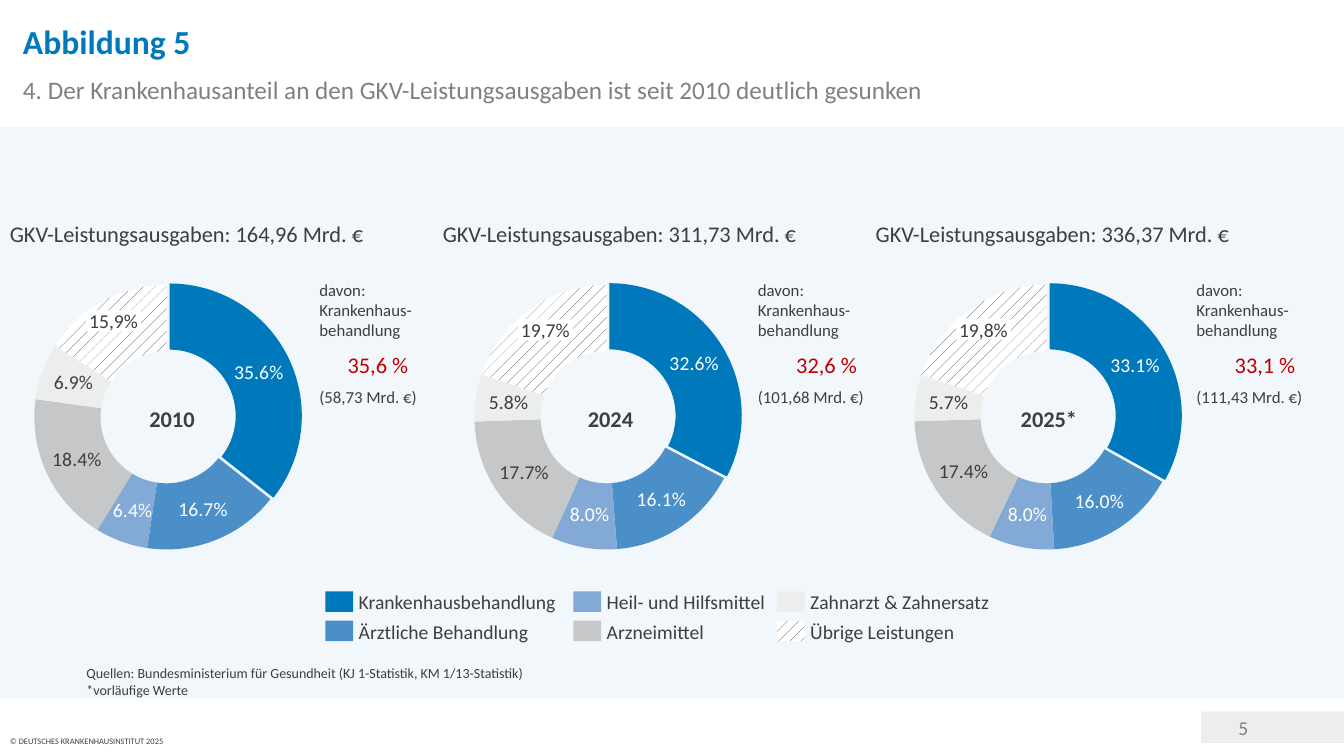
from lxml import etree
from pptx import Presentation
from pptx import util as u
from pptx.chart import data as chart_data
from pptx.dml import color
from pptx.enum import chart as chart_enum, dml, shapes, text
from pptx.oxml import ns

Cm, Pt = u.Cm, u.Pt
FONT = "Calibri"
COLORS = {
    "blue": "0079BC", "mid_blue": "4B8FC8", "light_blue": "83AAD6",
    "silver": "C6C7C8", "pale": "ECEDED", "text": "3E3D40",
    "gray": "808080", "red": "C00000", "white": "FFFFFF",
}
RGB = {name: color.RGBColor.from_string(value) for name, value in COLORS.items()}
SLICES = ["blue", "mid_blue", "light_blue", "silver", "pale", "hatch"]

presentation = Presentation()
presentation.slide_width, presentation.slide_height = Cm(33.87), Cm(19.05)
slide = presentation.slides.add_slide(presentation.slide_layouts[6])


def paint(fill, name):
    """Fill with a named colour, or with the dark-on-white pattern for "hatch"."""
    if name == "hatch":
        fill.patterned()
        fill.pattern = dml.MSO_PATTERN.PERCENT_10
        fill.fore_color.rgb, fill.back_color.rgb = RGB["text"], RGB["white"]
    else:
        fill.solid()
        fill.fore_color.rgb = RGB[name]


def add_box(box, lines=(), fill=None, inset=(0.25, 0.13), wrap=True,
            anchor=text.MSO_ANCHOR.TOP, align=text.PP_ALIGN.LEFT):
    """Box in cm; each line is (wording, size, colour, bold, space before)."""
    left, top, width, height = map(Cm, box)
    if fill:
        shape = slide.shapes.add_shape(
            shapes.MSO_SHAPE.RECTANGLE, left, top, width, height)
        shape.shadow.inherit = False
        shape.line.fill.background()
        paint(shape.fill, fill)
    else:
        shape = slide.shapes.add_textbox(left, top, width, height)
    frame = shape.text_frame
    frame.word_wrap, frame.vertical_anchor = wrap, anchor
    frame.margin_left = frame.margin_right = Cm(inset[0])
    frame.margin_top = frame.margin_bottom = Cm(inset[1])
    for index, (wording, size, tone, bold, before) in enumerate(lines):
        paragraph = frame.add_paragraph() if index else frame.paragraphs[0]
        paragraph.text = wording
        paragraph.alignment = align
        if before:
            paragraph.space_before = Pt(before)
        font = paragraph.runs[0].font
        font.name, font.size, font.bold = FONT, Pt(size), bold
        font.color.rgb = RGB[tone]
    return shape


# Frame of the slide
add_box((30.27, 17.93, 3.6, 0.79), fill="pale")
add_box((30.96, 17.91, 1.42, 0.86), [("5", 14, "gray", False, 0)], wrap=False)
add_box((0, 18.42, 8, 0.61),
        [("© DEUTSCHES KRANKENHAUSINSTITUT 2025", 6, "text", False, 0)])
panel = add_box((0, 3.2, 33.87, 14.4), fill="mid_blue")
panel_color = panel.fill._xPr.find(".//" + ns.qn("a:srgbClr"))
etree.SubElement(panel_color, ns.qn("a:alpha"), val="7000")

add_box((0.33, 0.4, 29.2, 1.3), [("Abbildung 5", 24, "blue", True, 0)])
add_box((0.33, 1.75, 32.8, 1.19),
        [("4. Der Krankenhausanteil an den GKV-Leistungsausgaben ist seit 2010 "
          "deutlich gesunken", 18, "gray", False, 0)])

# One column per year: spending, shares, hospital share, amount,
# label of the hatched slice with its place, width of the hospital text
YEARS = [
    ("2010", "164,96", [35.6, 16.7, 6.4, 18.4, 6.9, 15.9],
     "35,6 %", "58,73", "15,9%", (2.18, 7.82), 3.45),
    ("2024", "311,73", [32.6, 16.1, 8.0, 17.7, 5.8, 19.7],
     "32,6 %", "101,68", "19,7%", (13.06, 8.05), 3.96),
    ("2025*", "336,37", [33.1, 16.0, 8.0, 17.4, 5.7, 19.8],
     "33,1 %", "111,43", "19,8%", (24.1, 8.03), 3.96),
]
PLOT_AREA = {"x": 0.115, "y": 0.122, "w": 0.77, "h": 0.755}

for column, (year, spending, shares, hospital, amount,
             other, other_place, hospital_width) in enumerate(YEARS):
    add_box((10.91 * column, 5.41, 11.63, 1.19),
            [(f"GKV-Leistungsausgaben: {spending} Mrd. €", 16, "text", False, 0)])

    values = chart_data.CategoryChartData(number_format='0.0"%"')
    values.categories = ["1", "2", "3", "4", "5", "6"]
    values.add_series("Series 1", shares)
    chart = slide.shapes.add_chart(
        chart_enum.XL_CHART_TYPE.DOUGHNUT, Cm(-0.13 + 11.09 * column), Cm(6.1),
        Cm(8.66), Cm(8.84), values).chart
    chart.has_title = chart.has_legend = False
    chart.font.name, chart.font.size = FONT, Pt(14)
    chart.font.color.rgb = RGB["text"]
    plot = chart.plots[0]
    plot.vary_by_categories = True
    series = plot.series[0]
    series.data_labels.show_value = False
    for index, name in enumerate(SLICES):
        point = series.points[index]
        paint(point.format.fill, name)
        point.format.line.fill.background()
        if name != "hatch":
            font = point.data_label.font
            font.name, font.size = FONT, Pt(14)
            font.color.rgb = RGB["white" if index < 3 else "text"]

    hospital_slice = series._element.find(ns.qn("c:dPt"))
    explosion = etree.Element(ns.qn("c:explosion"), val="5")
    hospital_slice.find(ns.qn("c:spPr")).addprevious(explosion)

    plot_area = chart._chartSpace.find(".//" + ns.qn("c:plotArea"))
    for layout in plot_area.findall(ns.qn("c:layout")):
        plot_area.remove(layout)
    layout = etree.Element(ns.qn("c:layout"))
    plot_area.insert(0, layout)
    manual = etree.SubElement(layout, ns.qn("c:manualLayout"))
    settings = {"layoutTarget": "inner", "xMode": "edge", "yMode": "edge", **PLOT_AREA}
    for key, value in settings.items():
        etree.SubElement(manual, ns.qn("c:" + key), val=str(value))

    add_box((*other_place, 1.37, 0.53), [(other, 14, "text", False, 0)],
            fill="white", inset=(0.08, 0), wrap=False,
            anchor=text.MSO_ANCHOR.MIDDLE, align=text.PP_ALIGN.CENTER)
    add_box((2.9 + 11.05 * column, 10.08, 2.87, 0.94),
            [(year, 16, "text", True, 0)], align=text.PP_ALIGN.CENTER)
    details = add_box((7.8 + 11.05 * column, 6.91, hospital_width, 3.58),
                      [("davon: Krankenhaus-behandlung", 12, "text", False, 0),
                       (hospital, 16, "red", False, 8),
                       (f"({amount} Mrd. €)", 12, "text", False, 6)])
    details.text_frame.paragraphs[1].alignment = text.PP_ALIGN.CENTER

# Legend: filled column by column, two rows
LEGEND = ["Krankenhausbehandlung", "Ärztliche Behandlung", "Heil- und Hilfsmittel",
          "Arzneimittel", "Zahnarzt & Zahnersatz", "Übrige Leistungen"]
LEGEND_LEFT = [8.2, 14.45, 19.58]
for index, (label, name) in enumerate(zip(LEGEND, SLICES)):
    left, top = LEGEND_LEFT[index // 2], 14.9 + 0.74 * (index % 2)
    add_box((left, top, 0.7, 0.52), fill=name)
    add_box((left + 0.84, top - 0.02, 5.1, 0.58), [(label, 14, "text", False, 0)],
            inset=(0, 0), wrap=False, anchor=text.MSO_ANCHOR.MIDDLE)

add_box((1.93, 16.61, 23.34, 0.95),
        [("Quellen: Bundesministerium für Gesundheit (KJ 1-Statistik, "
          "KM 1/13-Statistik)", 10, "text", False, 0),
         ("*vorläufige Werte", 10, "text", False, 0)])

presentation.save("out.pptx")
